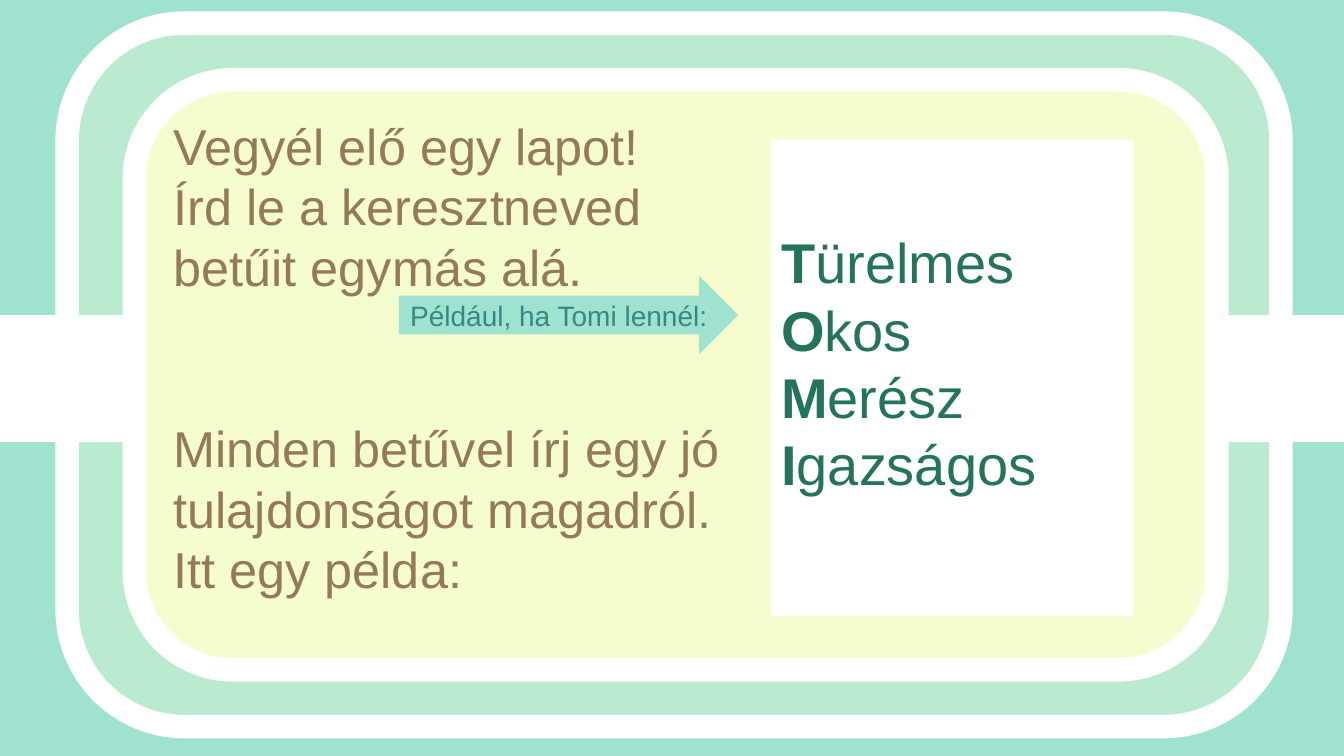
from dataclasses import dataclass

from lxml import etree
from pptx import Presentation
from pptx.dml.color import RGBColor
from pptx.enum.shapes import MSO_SHAPE
from pptx.enum.text import MSO_ANCHOR, MSO_AUTO_SIZE, PP_ALIGN
from pptx.oxml.ns import qn
from pptx.util import Emu, Pt

ROUNDED, RECT, ARROW = MSO_SHAPE.ROUNDED_RECTANGLE, MSO_SHAPE.RECTANGLE, MSO_SHAPE.RIGHT_ARROW
LEFT, CENTER, JUSTIFY = PP_ALIGN.LEFT, PP_ALIGN.CENTER, PP_ALIGN.JUSTIFY
TOP, MIDDLE = MSO_ANCHOR.TOP, MSO_ANCHOR.MIDDLE
NO_FIT = MSO_AUTO_SIZE.NONE

MINT = RGBColor(0x9E, 0xE2, 0xCF)
CREAM = RGBColor(0xF5, 0xFD, 0xCF)
WHITE = RGBColor(0xFF, 0xFF, 0xFF)
BROWN = RGBColor(0x94, 0x7B, 0x54)
GREEN = RGBColor(0x23, 0x73, 0x5D)
TEAL = RGBColor(0x36, 0x88, 0x85)

FONT = "Arial"
LEADING = 1.2
BORDER = Pt(16.75)


def px(n: int) -> Emu:
    return Emu(n * 9525)


@dataclass(frozen=True)
class Box:
    kind: MSO_SHAPE
    left: int
    top: int
    width: int
    height: int
    fill: RGBColor
    bordered: bool = False
    opacity: int = 100


@dataclass(frozen=True)
class Style:
    size: int
    color: RGBColor
    align: PP_ALIGN
    anchor: MSO_ANCHOR = TOP
    inset_top: int = 5
    wrap: bool = True


@dataclass(frozen=True)
class Line:
    text: str
    initial: str = ""
    skipped_lines: int = 0


OUTER = Box(ROUNDED, 64, 22, 1156, 670, CREAM, True, 33)
BAND = Box(RECT, 0, 300, 1280, 121, WHITE)
INNER = Box(ROUNDED, 128, 76, 1031, 562, CREAM, True)
PANEL = Box(RECT, 734, 133, 345, 454, WHITE)
HINT = Box(ARROW, 380, 263, 323, 74, MINT)

TASK = [
    Line("Vegyél elő egy lapot!"),
    Line("Írd le a keresztneved"),
    Line("betűit egymás alá."),
    Line("Minden betűvel írj egy jó", skipped_lines=2),
    Line("tulajdonságot magadról."),
    Line("Itt egy példa:"),
]
TRAITS = [Line("ürelmes", "T"), Line("kos", "O"), Line("erész", "M"), Line("gazságos", "I")]


def add_box(shapes, box: Box):
    s = shapes.add_shape(box.kind, px(box.left), px(box.top), px(box.width), px(box.height))
    s.shadow.inherit = False
    s.fill.solid()
    s.fill.fore_color.rgb = box.fill
    if box.opacity < 100:
        color = s.fill._xPr.find(qn("a:solidFill"))[0]
        etree.SubElement(color, qn("a:alpha"), val=str(box.opacity * 1000))
    if box.bordered:
        s.line.color.rgb = WHITE
        s.line.width = BORDER
    else:
        s.line.fill.background()
    return s


def write(s, lines: list[Line], style: Style) -> None:
    tf = s.text_frame
    tf.auto_size = NO_FIT
    tf.word_wrap = style.wrap
    tf.vertical_anchor = style.anchor
    tf.margin_left = tf.margin_right = px(10)
    tf.margin_top, tf.margin_bottom = px(style.inset_top), px(5)
    for i, line in enumerate(lines):
        p = tf.paragraphs[0] if i == 0 else tf.add_paragraph()
        p.alignment = style.align
        p.line_spacing = Pt(style.size * LEADING)
        p.space_before = Pt(line.skipped_lines * style.size * LEADING)
        pPr = p._p.get_or_add_pPr()
        pPr.set("marL", "0")
        pPr.set("indent", "0")
        etree.SubElement(pPr, qn("a:buNone"))
        for text, bold in ((line.initial, True), (line.text, False)):
            if text:
                r = p.add_run()
                r.text = text
                r.font.name = FONT
                r.font.size = Pt(style.size)
                r.font.bold = bold
                r.font.color.rgb = style.color


def place_list(slide, body, box: Box) -> None:
    body.left, body.top = px(box.left), px(box.top)
    body.width, body.height = px(box.width), px(box.height)
    body.fill.solid()
    body.fill.fore_color.rgb = box.fill
    slide.shapes._spTree.append(body._element)


def main() -> None:
    prs = Presentation()
    prs.slide_width, prs.slide_height = px(1280), px(720)
    slide = prs.slides.add_slide(prs.slide_layouts[1])
    slide.background.fill.solid()
    slide.background.fill.fore_color.rgb = MINT
    title, body = slide.placeholders
    title._element.getparent().remove(title._element)

    add_box(slide.shapes, OUTER)
    add_box(slide.shapes, BAND)
    write(add_box(slide.shapes, INNER), TASK, Style(36, BROWN, LEFT, inset_top=6))
    place_list(slide, body, PANEL)
    write(body, TRAITS, Style(40, GREEN, JUSTIFY, inset_top=84))
    hint = add_box(slide.shapes, HINT)
    write(hint, [Line("Például, ha Tomi lennél:")], Style(20, TEAL, CENTER, MIDDLE, wrap=False))
    prs.save("out.pptx")


if __name__ == "__main__":
    main()
